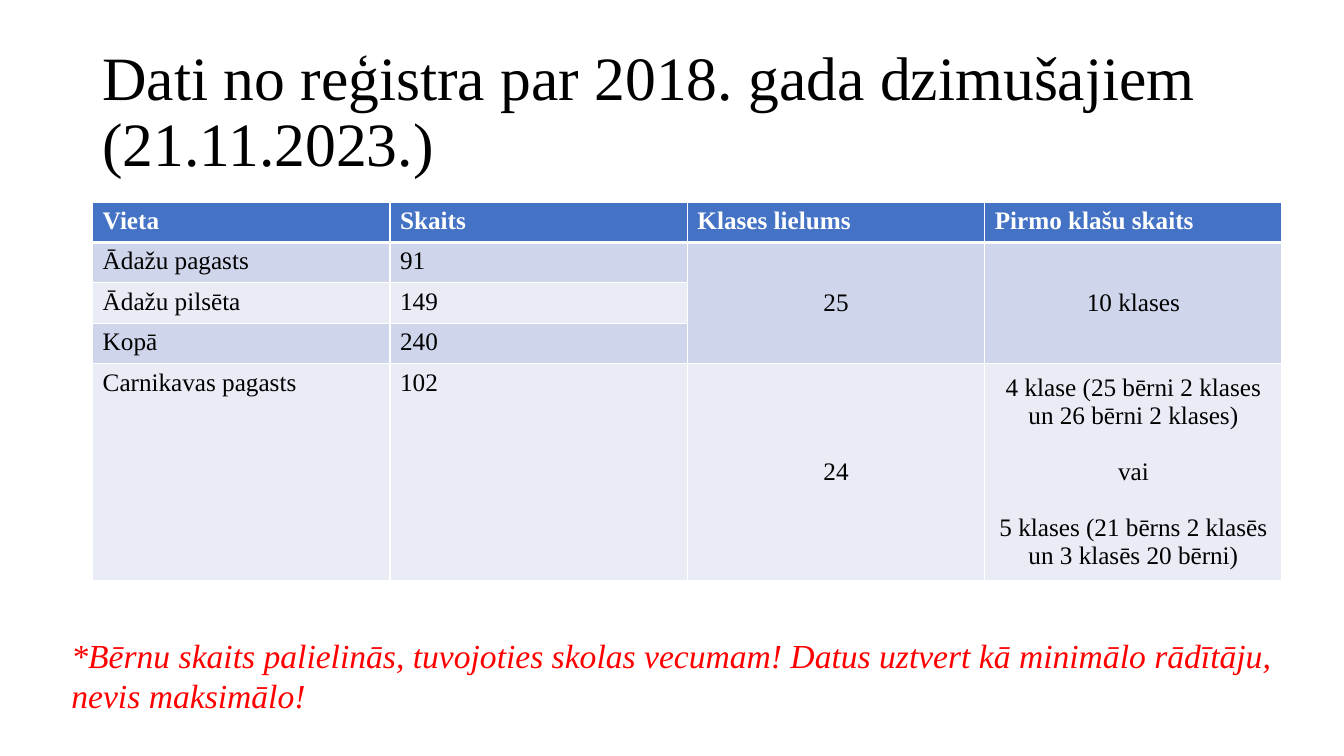
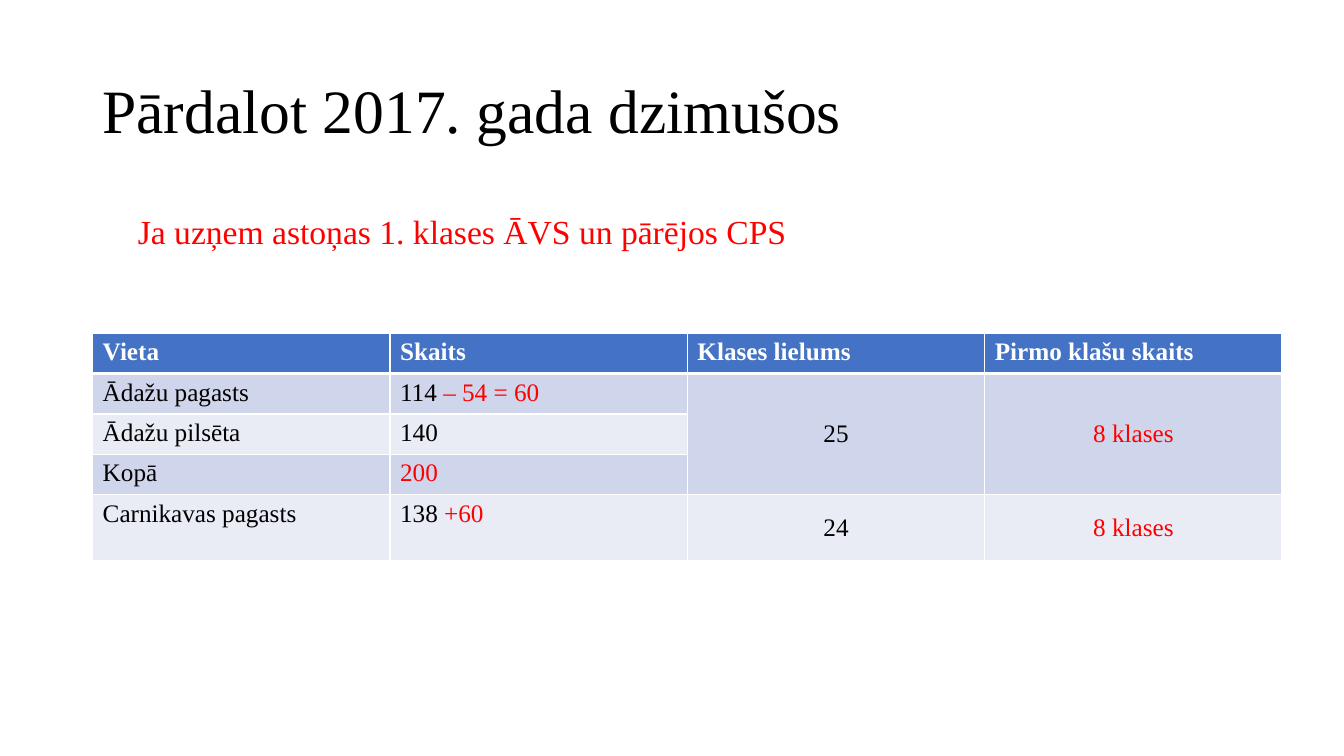
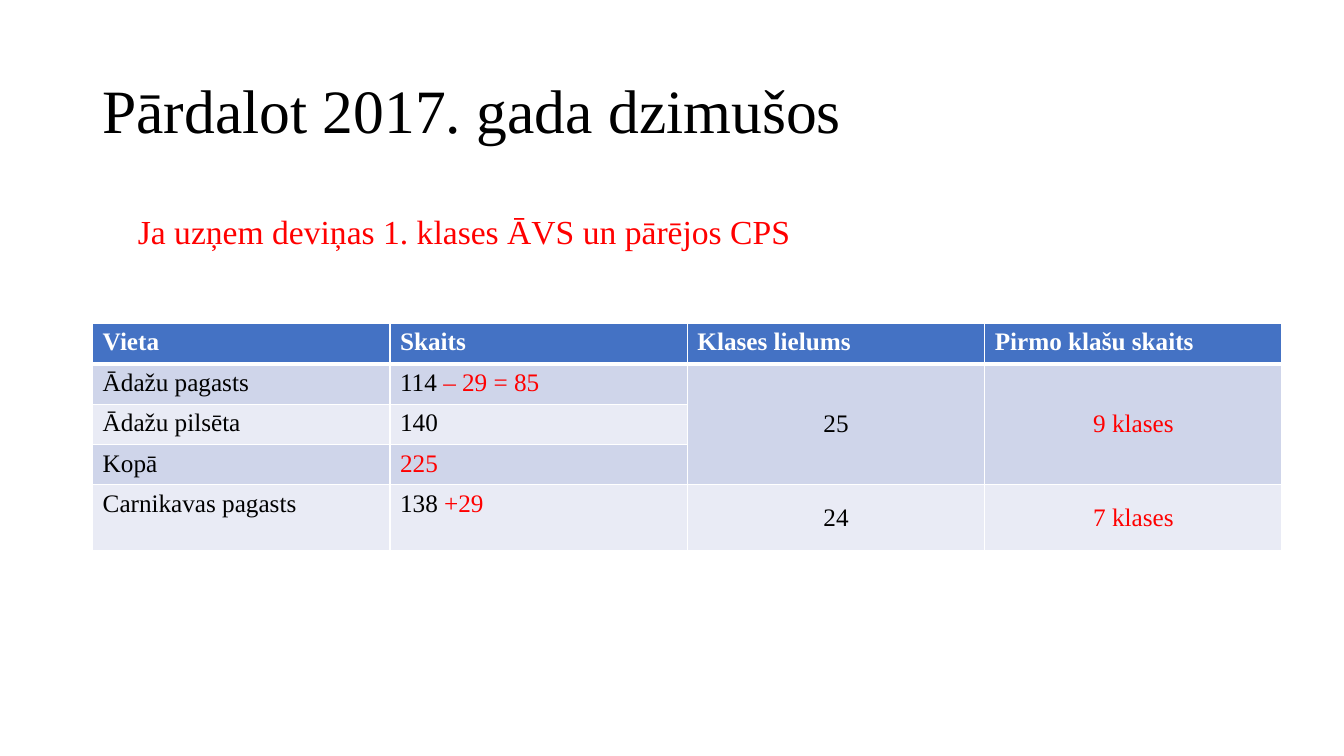
from lxml import etree
from pptx import Presentation
from pptx.dml.color import RGBColor
from pptx.enum.text import MSO_ANCHOR, PP_ALIGN
from pptx.oxml.ns import qn
from pptx.util import Pt

MIDDLE, TOP = MSO_ANCHOR.MIDDLE, MSO_ANCHOR.TOP
CENTER, LEFT = PP_ALIGN.CENTER, PP_ALIGN.LEFT
FONT = "Times New Roman"
BLACK = RGBColor(0x00, 0x00, 0x00)
WHITE = RGBColor(0xFF, 0xFF, 0xFF)
RED = RGBColor(0xFF, 0x00, 0x00)
BLUE = RGBColor(0x44, 0x72, 0xC4)
BANDS = (RGBColor(0xCF, 0xD5, 0xEA), RGBColor(0xE9, 0xEB, 0xF5))

TITLE_AREA = (66, 28.8, 828, 104.4)
SUBTITLE_AREA = (91.4, 146.9, 548.6, 36)
FOOTNOTE_AREA = (43.9, 450, 894.2, 65.5)
TABLE_LEFT, COLUMN_WIDTH, ROW_HEIGHT = 66.2, 212.4, 27.3
PARAGRAPH_GAP = 20

HEADINGS = ["Vieta", "Skaits", "Klases lielums", "Pirmo klašu skaits"]
PLACES = ["Ādažu pagasts", "Ādažu pilsēta", "Kopā", "Carnikavas pagasts"]
CLASS_SIZES = ["25", "", "", "24"]
MERGED_ROWS = (1, 3)
MERGED_COLUMNS = (2, 3)

SLIDES = [
    {
        "title": "Dati no reģistra par 2018. gada dzimušajiem (21.11.2023.)",
        "table_top": 144.3,
        "last_row": 146.5,
        "counts": [["91"], ["149"], ["240"], ["102"]],
        "classes": [
            ["10 klases"], [""], [""],
            ["4 klase (25 bērni 2 klases un 26 bērni 2 klases)\n"
             "vai\n"
             "5 klases (21 bērns 2 klasēs un 3 klasēs 20 bērni)"],
        ],
        "note": "*Bērnu skaits palielinās, tuvojoties skolas vecumam! "
                "Datus uztvert kā minimālo rādītāju, nevis maksimālo!",
        "note_area": FOOTNOTE_AREA,
        "note_italic": True,
    },
    {
        "title": "Pārdalot 2017. gada dzimušos",
        "table_top": 238,
        "last_row": 47.3,
        "counts": [["114 ", "– 54 = 60"], ["140"], ["", "200"], ["138 ", "+60"]],
        "classes": [["", "8 klases"], [""], [""], ["", "8 klases"]],
        "note": "Ja uzņem astoņas 1. klases ĀVS un pārējos CPS",
        "note_area": SUBTITLE_AREA,
        "note_italic": False,
    },
    {
        "title": "Pārdalot 2017. gada dzimušos",
        "table_top": 231,
        "last_row": 47.3,
        "counts": [["114 ", "– 29 = 85"], ["140"], ["", "225"], ["138 ", "+29"]],
        "classes": [["", "9 klases"], [""], [""], ["", "7 klases"]],
        "note": "Ja uzņem deviņas 1. klases ĀVS un pārējos CPS",
        "note_area": SUBTITLE_AREA,
        "note_italic": False,
    },
]


def style_run(run, size, color, bold=False, italic=False):
    run.font.name = FONT
    run.font.size = Pt(size)
    run.font.color.rgb = color
    run.font.bold = bold
    run.font.italic = italic


def add_text(page, area, text, size, color, italic=False):
    box = page.shapes.add_textbox(*map(Pt, area))
    frame = box.text_frame
    frame.word_wrap = True
    frame.text = text
    style_run(frame.paragraphs[0].runs[0], size, color, italic=italic)
    return frame


def add_title(page, text):
    frame = add_text(page, TITLE_AREA, text, 44, BLACK)
    frame.vertical_anchor = MIDDLE
    frame.paragraphs[0].line_spacing = 0.9


def set_borders(cell, widths):
    properties = cell._tc.get_or_add_tcPr()
    for index, (side, width) in enumerate(zip(("lnL", "lnR", "lnT", "lnB"), widths)):
        line = etree.Element(qn(f"a:{side}"), w=str(Pt(width)))
        fill = etree.SubElement(line, qn("a:solidFill"))
        etree.SubElement(fill, qn("a:srgbClr"), val=str(WHITE))
        properties.insert(index, line)


def fill_cell(cell, parts, colors, bold, centered):
    frame = cell.text_frame
    cell.vertical_anchor = MIDDLE if centered else TOP
    lines = parts[0].split("\n")
    for index, line in enumerate(lines):
        para = frame.paragraphs[0] if index == 0 else frame.add_paragraph()
        para.alignment = CENTER if centered else LEFT
        if index:
            para.space_before = Pt(PARAGRAPH_GAP)
        for text, color in zip([line] + parts[1:], colors):
            if text:
                run = para.add_run()
                run.text = text
                style_run(run, 18, color, bold=bold)


def add_class_table(page, content):
    rows = [[[heading] for heading in HEADINGS]]
    for place, count, size, classes in zip(
            PLACES, content["counts"], CLASS_SIZES, content["classes"]):
        rows.append([[place], count, [size], classes])
    heights = [ROW_HEIGHT] * (len(rows) - 1) + [content["last_row"]]
    columns = len(HEADINGS)
    table = page.shapes.add_table(
        len(rows), columns, Pt(TABLE_LEFT), Pt(content["table_top"]),
        Pt(COLUMN_WIDTH * columns), Pt(sum(heights))).table
    for column in table.columns:
        column.width = Pt(COLUMN_WIDTH)
    for row, height in zip(table.rows, heights):
        row.height = Pt(height)
    first, last = MERGED_ROWS
    for column in MERGED_COLUMNS:
        table.cell(first, column).merge(table.cell(last, column))
    for row_index, row in enumerate(rows):
        header = row_index == 0
        for column_index, parts in enumerate(row):
            cell = table.cell(row_index, column_index)
            centered = not header and column_index in MERGED_COLUMNS
            colors = (WHITE,) if header else (BLACK, RED)
            fill_cell(cell, parts, colors, header, centered)
            cell.fill.solid()
            cell.fill.fore_color.rgb = BLUE if header else BANDS[(row_index - 1) % 2]
            set_borders(cell, (1, 1, 3 if row_index == 1 else 1, 3 if header else 1))


def main():
    deck = Presentation()
    deck.slide_width, deck.slide_height = Pt(960), Pt(540)
    for content in SLIDES:
        page = deck.slides.add_slide(deck.slide_layouts[6])
        add_title(page, content["title"])
        add_class_table(page, content)
        add_text(page, content["note_area"], content["note"], 24, RED,
                 content["note_italic"])
    deck.save("out.pptx")


if __name__ == "__main__":
    main()
